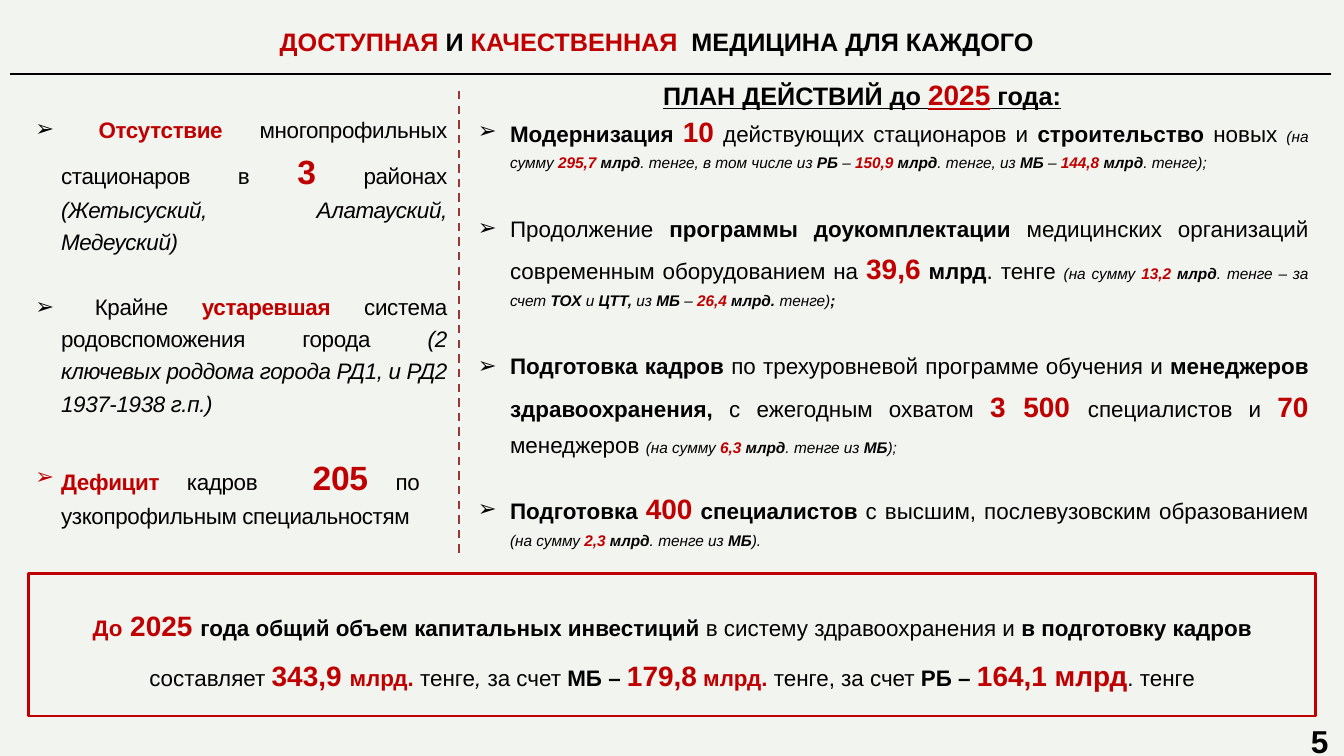
from dataclasses import dataclass
from lxml import etree
from pptx import Presentation
from pptx import util as u
from pptx.dml.color import RGBColor
from pptx.enum import dml, shapes, text
from pptx.oxml.ns import qn

Cm, Pt = u.Cm, u.Pt
ALIGN = text.PP_ALIGN
MID = text.MSO_ANCHOR.MIDDLE


@dataclass(frozen=True)
class Theme:
    font: str = "Arial"
    page: str = "F2F4F0"
    ink: str = "000000"
    red: str = "C00000"
    dash: str = "953735"
    body: float = 24
    small: float = 16.5
    large: float = 30
    huge: float = 36
    head: float = 27
    num: float = 33.9


T = Theme()
# Size codes; "l" and "x" are red and bold too, "s" is italic too
SIZES = {"s": T.small, "l": T.large, "x": T.huge, "h": T.head, "n": T.num}

# Each run is "codes:text": b bold, i italic, r red, u underlined, or a size
TITLE = "hbr:ДОСТУПНАЯ|hb: И |hbr:КАЧЕСТВЕННАЯ|hb:  МЕДИЦИНА ДЛЯ КАЖДОГО"
HEAD = "hbu:ПЛАН ДЕЙСТВИЙ до |lu:2025|hbu: года:"
NEEDS = [
    ": |br:Отсутствие|: многопрофильных стационаров в |x:3|: районах "
    "|i:(Жетысуский, Алатауский, Медеуский)",
    ": Крайне |br:устаревшая|: система родовспоможения города "
    "|i:(2 ключевых роддома города РД1, и РД2 1937-1938 г.п.)",
    "br:Дефицит|: кадров  |x:205|: по  узкопрофильным специальностям",
]
PLAN = [
    "b:Модернизация |l:10|: действующих стационаров и |b:строительство "
    "|:новых |s:(на сумму |sbr:295,7|sb: млрд|s:. тенге, в том числе из "
    "|sb:РБ|s: – |sbr:150,9|sb: млрд|s:. тенге, из |sb:МБ|s: – "
    "|sbr:144,8|sb: млрд|s:. тенге);",
    ":Продолжение |b:программы доукомплектации |:медицинских организаций "
    "современным оборудованием на |l:39,6|b: млрд|:. тенге |s:(на сумму "
    "|sbr:13,2|sb: млрд|s:. тенге – за счет |sb:ТОХ|s: и |sb:ЦТТ, |s:из"
    "|sb: МБ |s:– |sbr:26,4|sb: млрд. |s:тенге)|sb:;",
    "b:Подготовка кадров |:по трехуровневой программе обучения и "
    "|b:менеджеров здравоохранения, |:с ежегодным охватом |l:3 500 "
    "|:специалистов и |l:70 |:менеджеров |s:(на сумму |sbr:6,3|sb: млрд"
    "|s:. тенге из |sb:МБ|s:);",
    "b:Подготовка |l:400|b: специалистов |:с высшим, послевузовским "
    "образованием |s:(на сумму |sbr:2,3|sb: млрд|s:. тенге из |sb:МБ|s:).",
]
TOTAL = (
    "br:До|l: 2025 |b:года общий объем капитальных инвестиций "
    "|:в систему здравоохранения и|b: в подготовку кадров |:составляет "
    "|l:343,9 |br:млрд. |:тенге|i:, |:за счет |b:МБ – |l:179,8"
    "|br: млрд. |:тенге, за счет |b:РБ – |l:164,1 млрд|:. тенге"
)


def color(code):
    return RGBColor.from_string(code)


def write(para, line, track=0):
    """Fill a paragraph with the marked runs of a line."""
    for part in line.split("|"):
        codes, words = part.split(":", 1)
        marks = set(codes)
        run = para.add_run()
        run.text = words
        font = run.font
        font.name = T.font
        font.size = Pt(next((SIZES[c] for c in codes if c in SIZES), T.body))
        font.bold = bool(marks & set("blx"))
        font.italic = bool(marks & set("is"))
        font.underline = "u" in marks
        font.color.rgb = color(T.red if marks & set("rlx") else T.ink)
        if track:
            run._r.get_or_add_rPr().set("spc", str(track))


def bullet(para, left, hang):
    """Hang an arrow bullet to the left of the paragraph."""
    props = para._p.get_or_add_pPr()
    props.set("marL", str(Cm(left)))
    props.set("indent", str(-Cm(hang)))
    etree.SubElement(props, qn("a:buFont")).set("typeface", T.font)
    etree.SubElement(props, qn("a:buChar")).set("char", "➢")


def label(slide, box, lines, align, space=1.0, pad=None, anchor=None):
    """Place a wrapped text box and return its paragraphs."""
    frame = slide.shapes.add_textbox(*map(Cm, box)).text_frame
    frame.word_wrap = True
    if anchor:
        frame.vertical_anchor = anchor
    if pad is not None:
        frame.margin_left = frame.margin_right = Cm(pad)
        frame.margin_top = frame.margin_bottom = Cm(pad)
    for i in range(len(lines)):
        para = frame.add_paragraph() if i else frame.paragraphs[0]
        para.alignment = align
        para.line_spacing = space
    return frame.paragraphs


def note(slide, box, line, align, space=1.0, **opts):
    """Place a text of one paragraph."""
    write(label(slide, box, [line], align, space, **opts)[0], line)


def points(slide, box, lines, space, gaps, hang, track=0, pad=None):
    """Place a bulleted list with the given gaps above its items."""
    paras = label(slide, box, lines, ALIGN.JUSTIFY, space, pad)
    for para, line, gap in zip(paras, lines, gaps):
        para.space_before = Pt(gap)
        bullet(para, 1.22, hang)
        write(para, line, track)


def rule(slide, ends, tint, width, dash=None):
    """Draw a straight line."""
    line = slide.shapes.add_connector(
        shapes.MSO_CONNECTOR.STRAIGHT, *map(Cm, ends))
    line.line.color.rgb = color(tint)
    line.line.width = Pt(width)
    if dash:
        line.line.dash_style = dash
    etree.SubElement(line._element.spPr, qn("a:effectLst"))


def frame(slide, box):
    """Draw the red outline."""
    rect = slide.shapes.add_shape(
        shapes.MSO_SHAPE.RECTANGLE, *map(Cm, box))
    rect.shadow.inherit = False
    rect.fill.background()
    rect.line.color.rgb = color(T.red)
    rect.line.width = Pt(3)


def main():
    deck = Presentation()
    deck.slide_width, deck.slide_height = Cm(50.8), Cm(28.58)
    slide = deck.slides.add_slide(deck.slide_layouts[6])
    slide.background.fill.solid()
    slide.background.fill.fore_color.rgb = color(T.page)

    # Page number and title
    note(slide, (48.56, 27.28, 1.65, 1.45), "nb:5", ALIGN.RIGHT, pad=0)
    rule(slide, (0.38, 2.79, 50.32, 2.79), T.ink, 2.5)
    note(slide, (-0.58, 0.13, 50.8, 2.64), TITLE, ALIGN.CENTER, 1.2,
         anchor=MID)

    # Plan on the right, needs on the left
    points(slide, (17.81, 3.81, 31.9, 17.17), PLAN, 1.3,
           (0, 37.5, 37.5, 25.5), 1.22)
    rule(slide, (17.35, 20.9, 17.35, 3.45), T.dash, 2.25,
         dml.MSO_LINE.DASH)
    points(slide, (1.09, 4.17, 15.8, 16), NEEDS, 1.2,
           (0, 34.5, 34.5), 0.97, track=-40, pad=0)
    note(slide, (24.82, 2.57, 19.51, 1.65), HEAD, ALIGN.LEFT, 1.2)

    # Total at the foot
    frame(slide, (1.09, 21.69, 48.64, 5.38))
    note(slide, (2.29, 22.23, 46.23, 3.86), TOTAL, ALIGN.CENTER, 1.5)

    deck.save("out.pptx")


if __name__ == "__main__":
    main()
